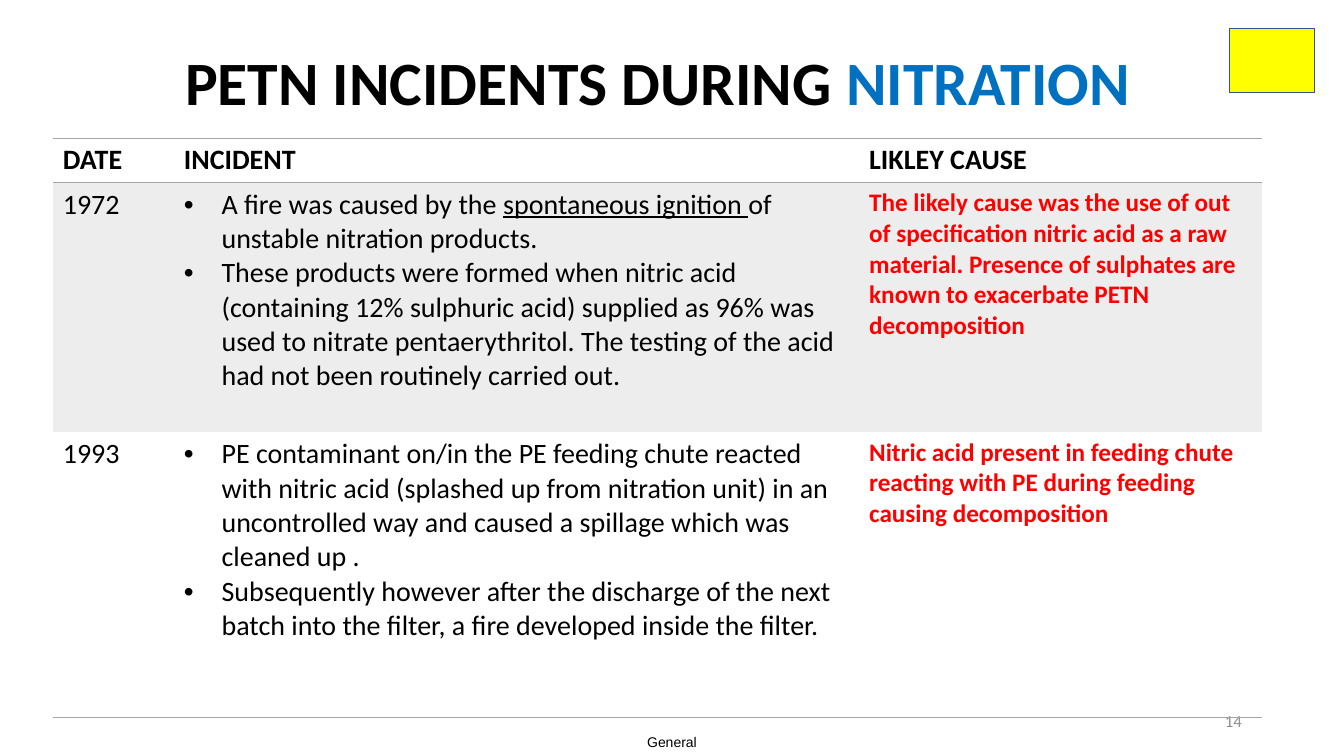
from pptx import Presentation
from pptx.dml.color import RGBColor
from pptx.enum.shapes import MSO_SHAPE
from pptx.enum.text import MSO_ANCHOR, PP_ALIGN
from pptx.oxml import parse_xml
from pptx.oxml.ns import nsdecls
from pptx.util import Cm, Pt

BLACK, BLUE, RED = "000000", "0070C0", "FF0000"
GREY, BAND = "A5A5A5", "EDEDED"
HEADS = ["DATE", "INCIDENT", "LIKLEY CAUSE"]
EVENTS = [
    ("1972",
     [["A fire was caused by the ", ("spontaneous ignition ", {"line": True}),
       "of unstable nitration products."],
      ["These products were formed when nitric acid (containing 12% sulphuric acid) "
       "supplied as 96% was used to nitrate pentaerythritol. The testing of the acid "
       "had not been routinely carried out."]],
     "The likely cause was the use of out of specification nitric acid as a raw "
     "material. Presence of sulphates are known to exacerbate PETN decomposition"),
    ("1993",
     [["PE contaminant on/in the PE feeding chute reacted with nitric acid (splashed "
       "up from nitration unit) in an uncontrolled way and caused a spillage which "
       "was cleaned up ."],
      ["Subsequently however after the discharge of the next batch into the filter, "
       "a fire developed inside the filter."]],
     "Nitric acid present in feeding chute reacting with PE during feeding causing "
     "decomposition"),
]


def paint(code):
    return RGBColor.from_string(code)


def write(para, text, size=20, color=BLACK, bold=False, line=False, font="Calibri"):
    run = para.add_run()
    run.text = text
    face = run.font
    face.name, face.size, face.bold = font, Pt(size), bold
    face.color.rgb = paint(color)
    if line:
        face.underline = True


def frame(slide, box, align, inset=True):
    """Add a middle-anchored text box and return its first paragraph."""
    text = slide.shapes.add_textbox(*map(Cm, box)).text_frame
    text.word_wrap = True
    text.vertical_anchor = MSO_ANCHOR.MIDDLE
    if not inset:
        text.margin_left = text.margin_right = 0
        text.margin_top = text.margin_bottom = 0
    para = text.paragraphs[0]
    para.alignment = align
    return para


def title(slide, box):
    para = frame(slide, box, PP_ALIGN.CENTER)
    para.line_spacing = 0.9
    write(para, "PETN INCIDENTS DURING ", size=44, bold=True)
    write(para, "NITRATION", size=44, bold=True, color=BLUE)


def footer(slide, label, page):
    write(frame(slide, label, PP_ALIGN.CENTER, inset=False), "General",
          size=10, font="Arial")
    write(frame(slide, page, PP_ALIGN.RIGHT), "14", size=12, color="8C8C8C")


def bullet(para):
    props = para._p.get_or_add_pPr()
    props.set("marL", str(Cm(0.95)))
    props.set("indent", str(-Cm(0.95)))
    for xml in ('<a:buFont {} typeface="Arial"/>', '<a:buChar {} char="•"/>'):
        props.append(parse_xml(xml.format(nsdecls("a"))))


def border(cell, sides):
    """Rule the given sides in grey and clear the others."""
    props = cell._tc.get_or_add_tcPr()
    for side in "LRTB":
        ink = (f'<a:solidFill><a:srgbClr val="{GREY}"/></a:solidFill>'
               if side in sides else "<a:noFill/>")
        props.append(parse_xml(
            f'<a:ln{side} {nsdecls("a")} w="{Pt(1)}">{ink}</a:ln{side}>'))


def table(slide, box):
    wides, highs = (3.05, 17.27, 10.16), (1.12, 6.29, 7.18)
    grid = slide.shapes.add_table(len(highs), len(wides), *map(Cm, box)).table
    grid.first_row = grid.horz_banding = False
    for col, wide in zip(grid.columns, wides):
        col.width = Cm(wide)
    for row, high, sides in zip(grid.rows, highs, ("TB", "T", "B")):
        row.height = Cm(high)
        for cell in row.cells:
            border(cell, sides)
            if sides == "T":
                cell.fill.solid()
                cell.fill.fore_color.rgb = paint(BAND)
            else:
                cell.fill.background()
    for col, head in enumerate(HEADS):
        write(grid.cell(0, col).text_frame.paragraphs[0], head, bold=True)
    for row, (date, facts, cause) in enumerate(EVENTS, 1):
        year, story, why = (grid.cell(row, col).text_frame for col in range(3))
        write(year.paragraphs[0], date)
        for num, fact in enumerate(facts):
            para = story.add_paragraph() if num else story.paragraphs[0]
            bullet(para)
            for part in fact:
                text, style = (part, {}) if isinstance(part, str) else part
                write(para, text, **style)
        write(why.paragraphs[0], cause, size=18, color=RED, bold=True)


def badge(slide, box):
    shape = slide.shapes.add_shape(MSO_SHAPE.RECTANGLE, *map(Cm, box))
    shape.shadow.inherit = False
    shape.fill.solid()
    shape.fill.fore_color.rgb = paint("FFFF00")
    shape.line.color.rgb = paint("325491")
    shape.line.width = Pt(1)


def main():
    deck = Presentation()
    deck.slide_width, deck.slide_height = Cm(33.87), Cm(19.05)
    slide = deck.slides.add_slide(deck.slide_layouts[6])
    footer(slide, (15.93, 18.36, 2.01, 0.69), (23.93, 17.65, 7.62, 1.02))
    title(slide, (1.6, 1.07, 29.95, 2.16))
    table(slide, (1.33, 3.48, 30.48, 14.59))
    badge(slide, (30.98, 0.72, 2.15, 1.61))
    deck.save("out.pptx")


if __name__ == "__main__":
    main()
